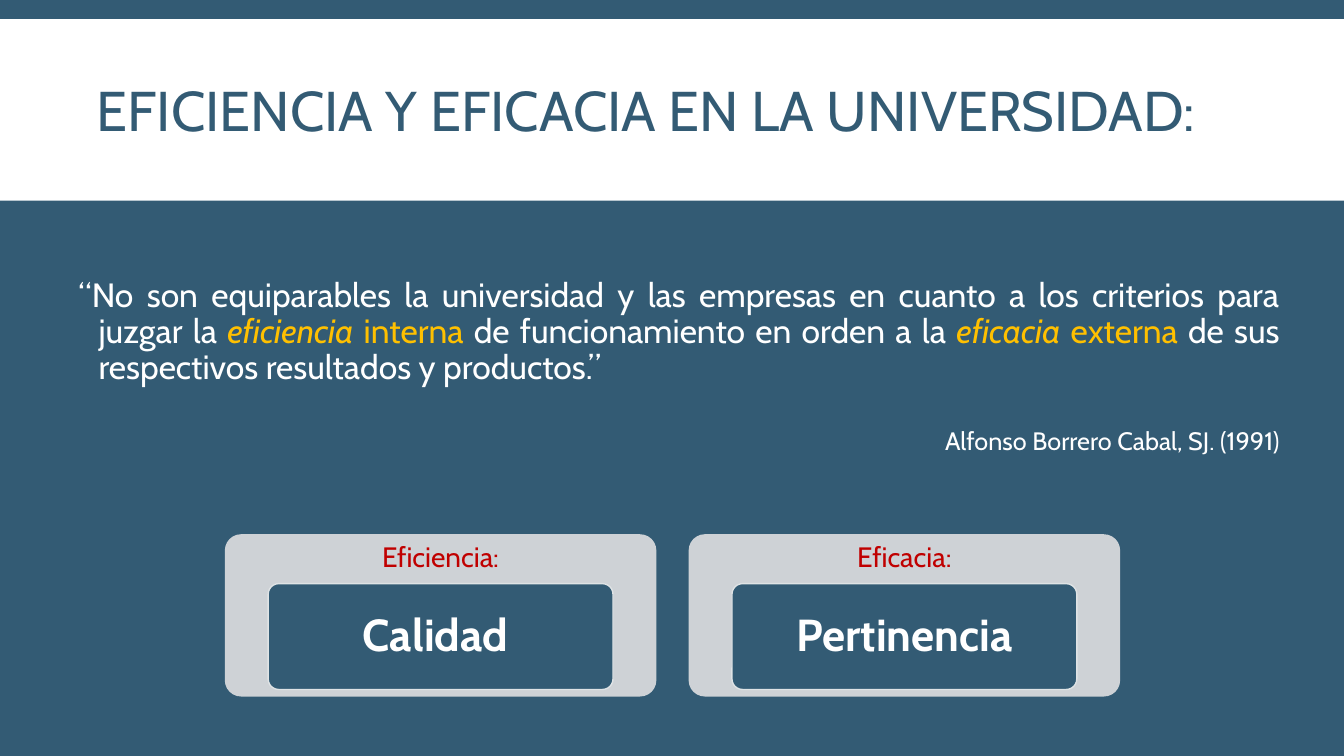
from dataclasses import dataclass

from pptx import Presentation, util as u
from pptx.dml.color import RGBColor
from pptx.enum import shapes, text

PX = 9144  # EMU per px, 100 px to the inch


@dataclass(frozen=True)
class Theme:
    font: str = "Cabin"
    blue: str = "335B74"
    white: str = "FFFFFF"
    amber: str = "FFC000"
    red: str = "C00000"
    panel: str = "CED2D6"
    edge: str = "DFE3E5"
    title: int = 40
    word: int = 32
    quote: int = 24
    label: int = 20
    author: int = 18


@dataclass(frozen=True)
class Box:
    x: int
    y: int
    w: int
    h: int

    def emu(self) -> tuple[int, ...]:
        return tuple(v * PX for v in (self.x, self.y, self.w, self.h))


@dataclass(frozen=True)
class Run:
    text: str
    size: int
    color: str
    bold: bool = False
    italic: bool = False


@dataclass(frozen=True)
class Card:
    label: str
    word: str


T = Theme()
MIDDLE = text.MSO_ANCHOR.MIDDLE
ALIGN = text.PP_ALIGN


def set_all(target, values: dict) -> None:
    for name, value in values.items():
        setattr(target, name, value)


def write(p, runs: list[Run], **fmt) -> None:
    set_all(p, fmt)
    for run in runs:
        r = p.add_run()
        r.text = run.text
        set_all(r.font, {"name": T.font, "size": u.Pt(run.size),
                         "bold": run.bold, "italic": run.italic})
        r.font.color.rgb = RGBColor.from_string(run.color)


def hang(p, px: int) -> None:
    pPr = p._p.get_or_add_pPr()
    pPr.set("marL", str(px * PX))
    pPr.set("indent", str(-px * PX))


def add_frame(s, box: Box, anchor=text.MSO_ANCHOR.TOP):
    tf = s.shapes.add_textbox(*box.emu()).text_frame
    set_all(tf, {"word_wrap": True, "vertical_anchor": anchor})
    return tf


def add_block(s, kind, box: Box, fill: str, line: str | None = None):
    sp = s.shapes.add_shape(kind, *box.emu())
    sp.shadow.inherit = False
    sp.fill.solid()
    sp.fill.fore_color.rgb = RGBColor.from_string(fill)
    if line:
        sp.line.color.rgb = RGBColor.from_string(line)
        sp.line.width = u.Pt(1)
    else:
        sp.line.fill.background()
    if kind == shapes.MSO_SHAPE.ROUNDED_RECTANGLE:
        sp.adjustments[0] = 0.1
    return sp


def add_card(s, card: Card, x: int, y: int) -> None:
    rounded = shapes.MSO_SHAPE.ROUNDED_RECTANGLE
    add_block(s, rounded, Box(x, y, 428, 161), T.panel)
    label = add_frame(s, Box(x, y, 428, 48), MIDDLE)
    sp = add_block(s, rounded, Box(x + 43, y + 49, 342, 105), T.blue, T.edge)
    sp.text_frame.vertical_anchor = MIDDLE
    fmt = {"alignment": ALIGN.CENTER, "line_spacing": 0.9}
    write(label.paragraphs[0], [Run(card.label, T.label, T.red)], **fmt)
    write(sp.text_frame.paragraphs[0],
          [Run(card.word, T.word, T.white, bold=True)], **fmt)


QUOTE = [
    Run("“No son equiparables la universidad y las empresas en cuanto a los "
        "criterios para juzgar la ", T.quote, T.white),
    Run("eficiencia", T.quote, T.amber, italic=True),
    Run(" interna ", T.quote, T.amber),
    Run("de funcionamiento en orden a la ", T.quote, T.white),
    Run("eficacia", T.quote, T.amber, italic=True),
    Run(" externa ", T.quote, T.amber),
    Run("de sus respectivos resultados y productos.”", T.quote, T.white),
]
CARDS = [Card("Eficiencia:", "Calidad "), Card("Eficacia:", "Pertinencia")]


def main() -> None:
    prs = Presentation()
    set_all(prs, {"slide_width": 1333 * PX, "slide_height": 750 * PX})
    s = prs.slides.add_slide(prs.slide_layouts[6])
    s.background.fill.solid()
    s.background.fill.fore_color.rgb = RGBColor.from_string(T.blue)

    # Title band
    add_block(s, shapes.MSO_SHAPE.RECTANGLE, Box(0, 19, 1333, 180), T.white)
    tf = add_frame(s, Box(86, 31, 1170, 165), MIDDLE)
    write(tf.paragraphs[0],
          [Run("EFICIENCIA Y EFICACIA EN LA UNIVERSIDAD:", T.title, T.blue)],
          line_spacing=0.85)

    # Quotation and its author
    tf = add_frame(s, Box(68, 271, 1211, 188))
    fmt = {"line_spacing": 0.9, "space_after": u.Pt(2)}
    p = tf.paragraphs[0]
    write(p, QUOTE, alignment=ALIGN.JUSTIFY, **fmt)
    hang(p, 20)
    write(tf.add_paragraph(),
          [Run("Alfonso Borrero Cabal, SJ. (1991)", T.author, T.white)],
          alignment=ALIGN.RIGHT, space_before=u.Pt(28), **fmt)

    # Paired cards
    for i, card in enumerate(CARDS):
        add_card(s, card, 223 + i * 460, 530)

    prs.save("out.pptx")


if __name__ == "__main__":
    main()
